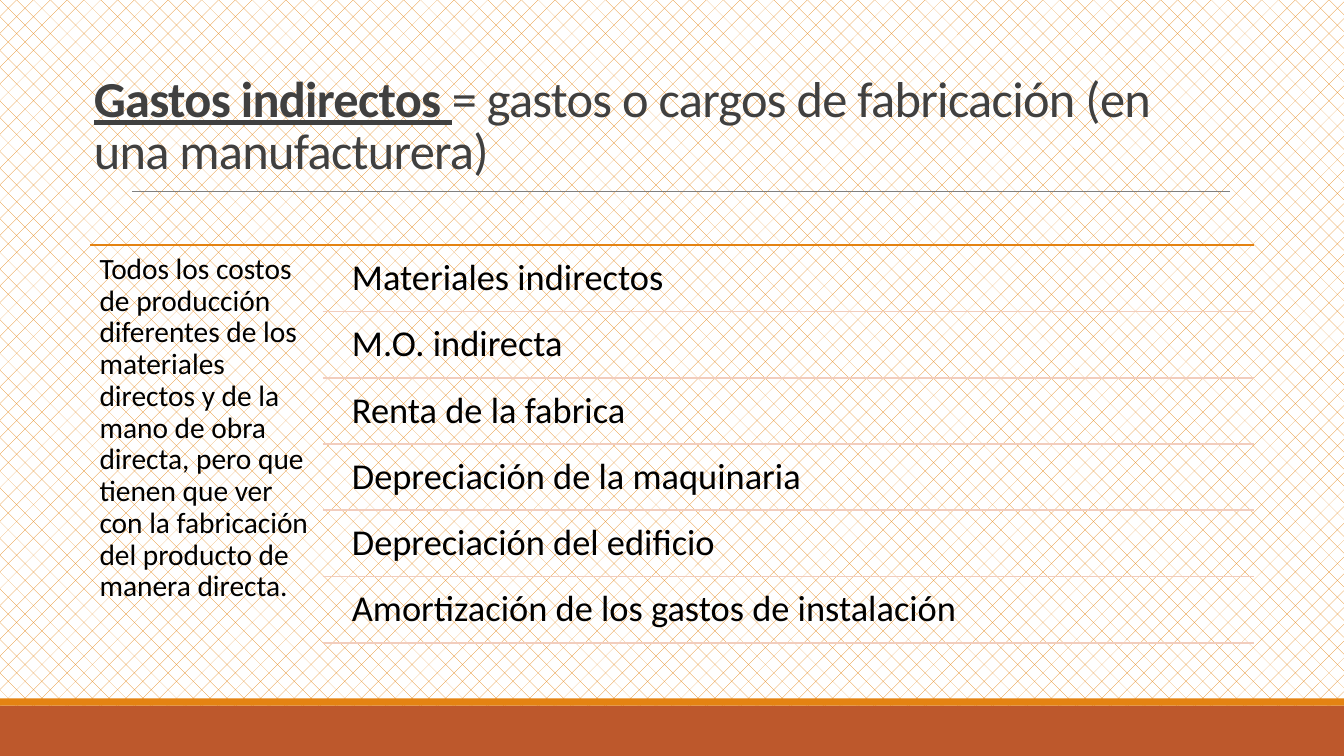
"""Build a slide that lists the indirect costs of a factory."""
from lxml import etree
from pptx import Presentation
from pptx.dml.color import RGBColor
from pptx.enum.dml import MSO_PATTERN
from pptx.enum.shapes import MSO_CONNECTOR, MSO_SHAPE
from pptx.enum.text import MSO_ANCHOR, MSO_AUTO_SIZE, PP_ALIGN
from pptx.oxml.ns import qn
from pptx.util import Cm, Pt

DIAMOND = MSO_PATTERN.DOTTED_DIAMOND
STRAIGHT = MSO_CONNECTOR.STRAIGHT
RECT = MSO_SHAPE.RECTANGLE
TOP, BOTTOM = MSO_ANCHOR.TOP, MSO_ANCHOR.BOTTOM
FIXED = MSO_AUTO_SIZE.NONE
LEFT = PP_ALIGN.LEFT

ORANGE, RUST, PINK = "E48312", "BD582C", "F2CDBD"
BLACK, DARK, GREY, WHITE = "000000", "404040", "808080", "FFFFFF"

INTRO = (
    "Todos los costos de producción diferentes de los materiales directos "
    "y de la mano de obra directa, pero que tienen que ver con la "
    "fabricación del producto de manera directa."
)
COSTS = [
    "Materiales indirectos",
    "M.O. indirecta",
    "Renta de la fabrica",
    "Depreciación de la maquinaria",
    "Depreciación del edificio",
    "Amortización de los gastos de instalación",
]


def color(code):
    """Turn a hex string into a colour."""
    return RGBColor.from_string(code)


def apply(item, values):
    """Set each named value on an item."""
    for name, value in values.items():
        setattr(item, name, value)


class Page:
    """Hold the style and the current slide."""

    font = "Calibri"

    def __init__(self, deck):
        """Add a slide with a title only."""
        self.slide = deck.slides.add_slide(deck.slide_layouts[5])
        self.shapes = self.slide.shapes

    def back(self, fore, base):
        """Fill the background with a diamond pattern."""
        fill = self.slide.background.fill
        fill.patterned()
        fill.pattern = DIAMOND
        fill.fore_color.rgb = color(fore)
        fill.back_color.rgb = color(base)

    def bar(self, box, code):
        """Draw a plain filled bar."""
        bar = self.shapes.add_shape(RECT, *map(Cm, box))
        bar.shadow.inherit = False
        bar.fill.solid()
        bar.fill.fore_color.rgb = color(code)
        bar.line.fill.background()

    def rule(self, left, right, y, code, width):
        """Draw a level line."""
        ends = map(Cm, (left, y, right, y))
        rule = self.shapes.add_connector(STRAIGHT, *ends)
        rule.line.color.rgb = color(code)
        rule.line.width = Pt(width)
        etree.SubElement(rule._element.spPr, qn("a:effectLst"))

    def words(self, frame, parts, size, code, space):
        """Put formatted runs into the first paragraph."""
        para = frame.paragraphs[0]
        apply(para, {"alignment": LEFT, "line_spacing": space})
        for part, style in parts:
            run = para.add_run()
            run.text = part
            run.font.color.rgb = color(code)
            apply(run.font, {"name": self.font, "size": Pt(size), **style})
        return para

    def title(self, box, parts):
        """Place and fill the title."""
        title = self.shapes.title
        names = ("left", "top", "width", "height")
        apply(title, dict(zip(names, map(Cm, box))))
        frame = title.text_frame
        apply(frame, {"word_wrap": True, "auto_size": FIXED,
                      "vertical_anchor": BOTTOM})
        para = self.words(frame, parts, 36, DARK, 0.85)
        for run in para.runs:
            run._r.get_or_add_rPr().set("spc", "-50")

    def text(self, box, words, size, inset):
        """Add a text box with even insets."""
        frame = self.shapes.add_textbox(*map(Cm, box)).text_frame
        sides = ("left", "top", "right", "bottom")
        apply(frame, {f"margin_{side}": Cm(inset) for side in sides})
        apply(frame, {"word_wrap": True, "auto_size": FIXED,
                      "vertical_anchor": TOP})
        para = self.words(frame, [(words, {})], size, BLACK, 0.9)
        para.space_after = Pt(size * 0.35)


def main():
    """Build and save the deck."""
    deck = Presentation()
    apply(deck, {"slide_width": Cm(33.87), "slide_height": Cm(19.05)})
    page = Page(deck)
    page.back(ORANGE, WHITE)
    page.bar((0, 17.78, 33.87, 1.27), RUST)
    page.bar((0, 17.6, 33.87, 0.18), ORANGE)
    page.rule(3.33, 31, 4.83, GREY, 0.5)
    page.title((2.11, 0.61, 27.94, 4.04), [
        ("Gastos indirectos ", {"bold": True, "underline": True}),
        ("= gastos o cargos de fabricación (en una manufacturera)", {}),
    ])

    left, right, top = 2.28, 31.6, 6.17
    page.rule(left, right, top, ORANGE, 1.25)
    page.text((left, top, 5.87, 10.1), INTRO, 21, 0.23)
    start, step, tall = 8.59, 1.67, 1.6
    for row, cost in enumerate(COSTS):
        y = top + 0.08 + row * step
        page.text((start, y, right - start, tall), cost, 26, 0.28)
        page.rule(8.13, right, y + tall, PINK, 1.25)
    deck.save("out.pptx")


if __name__ == "__main__":
    main()
